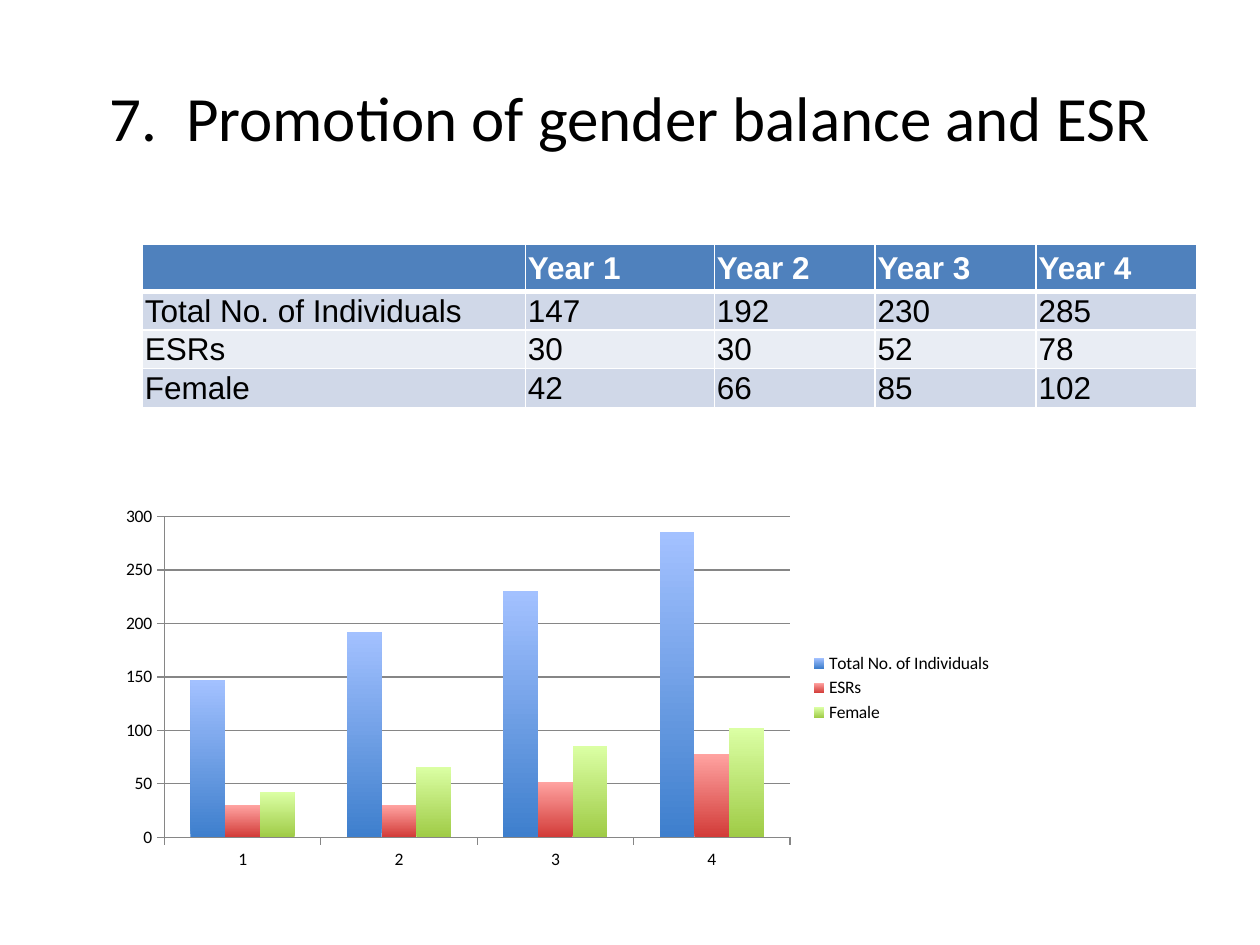
from lxml import etree
from pptx import Presentation
from pptx.chart.data import CategoryChartData
from pptx.dml.color import RGBColor
from pptx.enum.chart import XL_CHART_TYPE as ChartType
from pptx.enum.chart import XL_LEGEND_POSITION as LegendPosition
from pptx.enum.chart import XL_TICK_MARK as TickMark
from pptx.enum.text import MSO_ANCHOR as Anchor
from pptx.enum.text import MSO_AUTO_SIZE as AutoSize
from pptx.enum.text import PP_ALIGN as Align
from pptx.oxml.ns import qn
from pptx.util import Cm, Pt

COLORS = {
    "black": "000000",
    "white": "FFFFFF",
    "header": "4F81BD",
    "band_dark": "D0D8E8",
    "band_light": "E9EDF4",
    "axis": "868686",
}
# Bottom and top colour of the bars of each series
BAR_GRADIENTS = [("3E7FCD", "A3C1FF"), ("D23B38", "FFA3A1"), ("9FCB46", "DBFFA4")]

YEARS = [1, 2, 3, 4]
COUNTS = {
    "Total No. of Individuals": [147, 192, 230, 285],
    "ESRs": [30, 30, 52, 78],
    "Female": [42, 66, 85, 102],
}


def rgb(name):
    return RGBColor.from_string(COLORS[name])


def write(frame, text, font="Arial", size=18, color="black", bold=False, align=Align.LEFT):
    paragraph = frame.paragraphs[0]
    paragraph.alignment = align
    run = paragraph.add_run()
    run.text = text
    run.font.name = font
    run.font.size = Pt(size)
    run.font.bold = bold
    run.font.color.rgb = rgb(color)


def add_title(slide, left, top, width, height):
    title = slide.shapes.title
    title.left, title.top, title.width, title.height = left, top, width, height
    frame = title.text_frame
    frame.word_wrap = True
    frame.auto_size = AutoSize.NONE
    frame.vertical_anchor = Anchor.MIDDLE
    write(frame, "7.  Promotion of gender balance and ESR",
          font="Calibri", size=36, align=Align.CENTER)


def set_borders(cell, top=1, bottom=1):
    properties = cell._tc.get_or_add_tcPr()
    for side, points in (("L", 1), ("R", 1), ("T", top), ("B", bottom)):
        line = etree.SubElement(properties, qn(f"a:ln{side}"), w=str(Pt(points)))
        fill = etree.SubElement(line, qn("a:solidFill"))
        etree.SubElement(fill, qn("a:srgbClr"), val=COLORS["white"])


def add_counts_table(slide, left, top, width):
    rows = [["", *(f"Year {year}" for year in YEARS)]]
    rows += [[label, *map(str, values)] for label, values in COUNTS.items()]
    header_height, body_height = Cm(0.94), Cm(0.78)
    height = header_height + body_height * len(COUNTS)
    table = slide.shapes.add_table(len(rows), len(rows[0]), left, top, width, height).table

    # The label and first year columns are wider; the rest share what is left
    label_width, first_width = Cm(7.72), Cm(3.81)
    year_width = (width - label_width - first_width) // (len(YEARS) - 1)
    widths = [label_width, first_width] + [year_width] * (len(YEARS) - 1)
    for column, column_width in zip(table.columns, widths):
        column.width = column_width

    for r, texts in enumerate(rows):
        is_header = r == 0
        table.rows[r].height = header_height if is_header else body_height
        band = "header" if is_header else "band_dark" if r % 2 else "band_light"
        for c, text in enumerate(texts):
            cell = table.cell(r, c)
            set_borders(cell, top=3 if r == 1 else 1, bottom=3 if is_header else 1)
            cell.fill.solid()
            cell.fill.fore_color.rgb = rgb(band)
            cell.margin_left = cell.margin_right = Cm(0.05)
            cell.margin_top, cell.margin_bottom = Cm(0.03), 0
            cell.vertical_anchor = Anchor.MIDDLE
            if text:
                write(cell.text_frame, text, bold=is_header,
                      color="white" if is_header else "black")


def add_counts_chart(slide, left, top, width, height):
    data = CategoryChartData()
    data.categories = [str(year) for year in YEARS]
    for label, values in COUNTS.items():
        data.add_series(label, values)
    chart = slide.shapes.add_chart(
        ChartType.COLUMN_CLUSTERED, left, top, width, height, data).chart
    chart.has_title = False
    chart.font.name = "Calibri"
    chart.font.size = Pt(10)
    chart.font.color.rgb = rgb("black")

    # Legend
    chart.has_legend = True
    chart.legend.position = LegendPosition.RIGHT
    chart.legend.include_in_layout = False

    # Axes and gridlines
    values_axis = chart.value_axis
    values_axis.minimum_scale, values_axis.maximum_scale = 0, 300
    values_axis.major_unit = 50
    values_axis.has_major_gridlines = True
    for axis in (chart.category_axis, values_axis):
        axis.major_tick_mark = TickMark.OUTSIDE
        axis.minor_tick_mark = TickMark.NONE
    for part in (chart.category_axis, values_axis, values_axis.major_gridlines):
        part.format.line.color.rgb = rgb("axis")
        part.format.line.width = Pt(0.75)

    # Bars
    plot = chart.plots[0]
    plot.gap_width = 150
    plot.overlap = 0
    plot.vary_by_categories = False
    for series, gradient in zip(plot.series, BAR_GRADIENTS):
        series.invert_if_negative = False
        fill = series.format.fill
        fill.gradient()
        fill.gradient_angle = 90
        for stop, color in zip(fill.gradient_stops, gradient):
            stop.color.rgb = RGBColor.from_string(color)


def main():
    deck = Presentation()
    deck.slide_width, deck.slide_height = Cm(25.4), Cm(19.05)
    slide = deck.slides.add_slide(deck.slide_layouts.get_by_name("Title Only"))
    add_title(slide, Cm(1.27), Cm(0.76), Cm(22.86), Cm(3.18))
    add_counts_table(slide, Cm(2.87), Cm(4.93), Cm(21.26))
    add_counts_chart(slide, Cm(2.18), Cm(10.06), Cm(18.08), Cm(7.62))
    deck.save("out.pptx")


if __name__ == "__main__":
    main()
